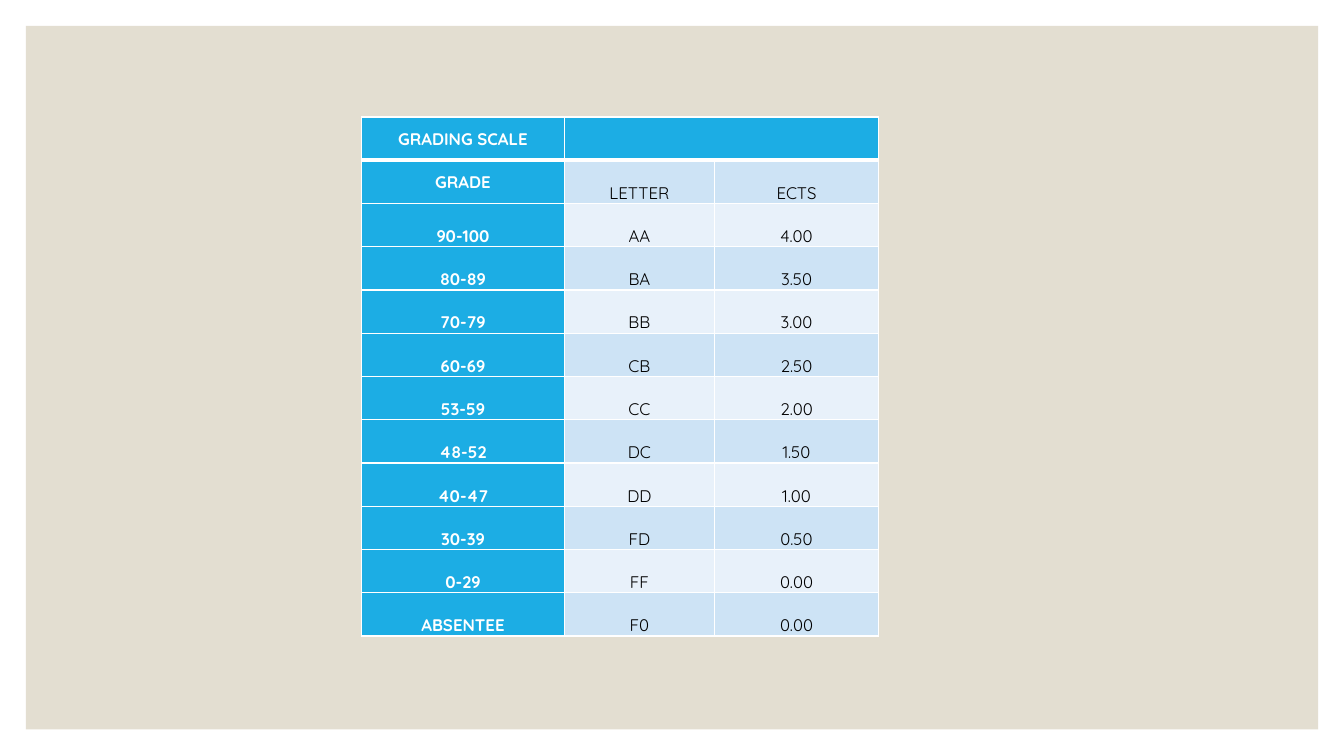
from lxml import etree
from pptx import Presentation
from pptx import util as u
from pptx.dml.color import RGBColor
from pptx.enum import shapes, text
from pptx.oxml import ns

PX = 6350  # EMU per px, 144 px to the inch

WHITE = RGBColor(0xFF, 0xFF, 0xFF)
BLACK = RGBColor(0x00, 0x00, 0x00)
BEIGE = RGBColor(0xE3, 0xDE, 0xD1)
BLUE = RGBColor(0x1C, 0xAD, 0xE4)
BANDS = (RGBColor(0xE8, 0xF1, 0xFA), RGBColor(0xCD, 0xE3, 0xF5))

BODY_FONT = {"name": "Quicksand", "size": u.Pt(12), "bold": False}
HEAD_FONT = {**BODY_FONT, "bold": True}

COLUMN_WIDTHS = (289, 215, 234)
TABLE_HEIGHT = 742
GRADES = (
    ("GRADING SCALE", "", ""),
    ("GRADE", "LETTER", "ECTS"),
    ("90-100", "AA", "4.00"),
    ("80-89", "BA", "3.50"),
    ("70-79", "BB", "3.00"),
    ("60-69", "CB", "2.50"),
    ("53-59", "CC", "2.00"),
    ("48-52", "DC", "1.50"),
    ("40-47", "DD", "1.00"),
    ("30-39", "FD", "0.50"),
    ("0-29", "FF", "0.00"),
    ("ABSENTEE", "F0", "0.00"),
)


def px(length):
    return u.Emu(length * PX)


def set_values(target, values):
    for name, value in values.items():
        setattr(target, name, value)


def add_panel(slide, left, top, width, height, color):
    panel = slide.shapes.add_shape(
        shapes.MSO_SHAPE.RECTANGLE, px(left), px(top), px(width), px(height))
    panel.shadow.inherit = False
    panel.fill.solid()
    panel.fill.fore_color.rgb = color
    panel.line.fill.background()


def set_borders(cell, color, widths):
    properties = cell._tc.get_or_add_tcPr()
    for side, points in widths.items():
        line = etree.SubElement(properties, ns.qn(f"a:ln{side}"), w=str(u.Pt(points)))
        fill = etree.SubElement(line, ns.qn("a:solidFill"))
        etree.SubElement(fill, ns.qn("a:srgbClr"), val=str(color))


def fill_cell(cell, wording, row, column):
    is_head = row == 0 or column == 0
    set_values(cell, {
        "margin_left": px(1), "margin_right": px(1),
        "margin_top": px(1), "margin_bottom": 0,
        "vertical_anchor": text.MSO_ANCHOR.MIDDLE if is_head and row < 2
        else text.MSO_ANCHOR.BOTTOM,
    })
    # The rule below the title row is thicker than the rest
    set_borders(cell, WHITE, {"L": 1, "R": 1, "T": 3 if row == 1 else 1,
                              "B": 3 if row == 0 else 1})
    cell.fill.solid()
    cell.fill.fore_color.rgb = BLUE if is_head else BANDS[row % 2]

    paragraph = cell.text_frame.paragraphs[0]
    paragraph.alignment = text.PP_ALIGN.CENTER
    if wording:
        run = paragraph.add_run()
        run.text = wording
        set_values(run.font, HEAD_FONT if is_head else BODY_FONT)
        run.font.color.rgb = WHITE if is_head else BLACK


def add_grade_table(slide, left, top):
    table = slide.shapes.add_table(
        len(GRADES), len(COLUMN_WIDTHS), px(left), px(top),
        px(sum(COLUMN_WIDTHS)), px(TABLE_HEIGHT)).table
    for column, width in zip(table.columns, COLUMN_WIDTHS):
        column.width = px(width)
    for row in table.rows:
        row.height = px(TABLE_HEIGHT) // len(GRADES)
    for row, wordings in enumerate(GRADES):
        for column, wording in enumerate(wordings):
            fill_cell(table.cell(row, column), wording, row, column)
    table.cell(0, 1).merge(table.cell(0, 2))


def main():
    presentation = Presentation()
    set_values(presentation, {"slide_width": px(1920), "slide_height": px(1080)})
    slide = presentation.slides.add_slide(presentation.slide_layouts[6])

    # Backdrop
    add_panel(slide, 37, 37, 1846, 1005, BEIGE)

    # Grading scale
    add_grade_table(slide, 517, 167)

    presentation.save("out.pptx")


if __name__ == "__main__":
    main()
